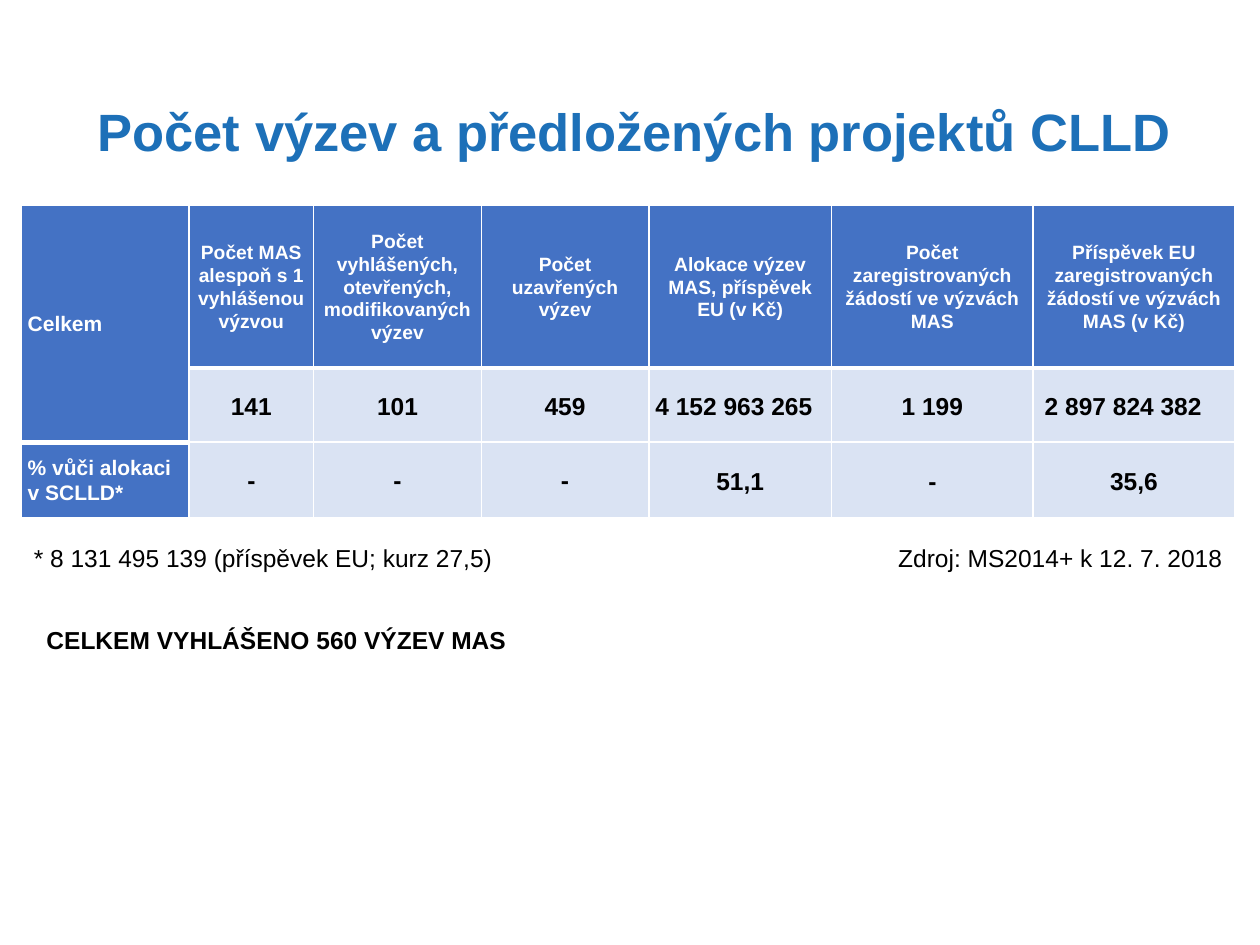
from lxml import etree
from pptx import Presentation
from pptx import util as u
from pptx.dml import color
from pptx.enum import text
from pptx.oxml import ns

FONT = "Arial"
WHITE, BLACK = "FFFFFF", "000000"
TITLE_BLUE, HEADER_BLUE, PALE_BLUE = "1D70B8", "4472C4", "DAE3F3"
LEFT, CENTER = text.PP_ALIGN.LEFT, text.PP_ALIGN.CENTER

COLUMNS = [1.33, 0.99, 1.33, 1.33, 1.45, 1.6, 1.6]
ROWS = [1.29, 0.59, 0.6]
CELLS = [
    ["Celkem", "Počet MAS alespoň s 1 vyhlášenou výzvou",
     "Počet vyhlášených, otevřených, modifikovaných výzev",
     "Počet uzavřených výzev", "Alokace výzev MAS, příspěvek EU (v Kč)",
     "Počet zaregistrovaných žádostí ve výzvách MAS",
     "Příspěvek EU zaregistrovaných žádostí ve výzvách MAS (v Kč)"],
    ["", "141", "101", "459", "4 152 963 265", "1 199", "2 897 824 382"],
    ["% vůči alokaci v SCLLD*", "-", "-", "-", "51,1", "-", "35,6"],
]
# The two long amounts sit slightly left of their column centres
AMOUNT_MARGINS = {(1, 4): (0.02, 0.12), (1, 6): (0.02, 0.19)}


def rgb(value):
    return color.RGBColor.from_string(value)


def add_run(para, words, size, ink, bold):
    span = para.add_run()
    span.text = words
    span.font.name = FONT
    span.font.size = u.Pt(size)
    span.font.bold = bold
    span.font.color.rgb = rgb(ink)


def add_label(page, area, words, size=14, ink=BLACK, bold=False,
              align=LEFT, spacing=None, wrap=True):
    box = page.shapes.add_textbox(*(u.Inches(length) for length in area))
    frame = box.text_frame
    frame.word_wrap = wrap
    frame.auto_size = text.MSO_AUTO_SIZE.SHAPE_TO_FIT_TEXT
    para = frame.paragraphs[0]
    para.alignment = align
    if spacing:
        para.line_spacing = spacing
    add_run(para, words, size, ink, bold)


def set_borders(cell, top, bottom):
    properties = cell._tc.get_or_add_tcPr()
    for side, width in (("L", 1), ("R", 1), ("T", top), ("B", bottom)):
        line = etree.SubElement(properties, ns.qn(f"a:ln{side}"), w=str(u.Pt(width)))
        fill = etree.SubElement(line, ns.qn("a:solidFill"))
        etree.SubElement(fill, ns.qn("a:srgbClr"), val=WHITE)


def style_cell(cell, row, column):
    label = column == 0
    header = row == 0 or label
    # Thick rules close the header row and the merged label
    thick_bottom = (row == 0 and not label) or (row == 1 and label)
    thick_top = (row == 1 and not label) or (row == 2 and label)
    set_borders(cell, 3 if thick_top else 1, 3 if thick_bottom else 1)
    cell.fill.solid()
    cell.fill.fore_color.rgb = rgb(HEADER_BLUE if header else PALE_BLUE)
    cell.vertical_anchor = text.MSO_ANCHOR.MIDDLE
    left, right = AMOUNT_MARGINS.get((row, column), (0.05, 0.05))
    cell.margin_left, cell.margin_right = u.Inches(left), u.Inches(right)
    cell.margin_top = cell.margin_bottom = 0

    words = CELLS[row][column]
    if words:
        para = cell.text_frame.paragraphs[0]
        para.alignment = LEFT if label else CENTER
        loose = row == 1 or (row == 2 and column > 3)
        para.line_spacing = 1.15 if loose else 1.07
        size = 12 if label else 11 if header else 14
        add_run(para, words, size, WHITE if header else BLACK, True)


def add_calls_table(page, left, top):
    frame = page.shapes.add_table(
        len(ROWS), len(COLUMNS), u.Inches(left), u.Inches(top),
        u.Inches(sum(COLUMNS)), u.Inches(sum(ROWS)))
    table = frame.table
    for column, width in zip(table.columns, COLUMNS):
        column.width = u.Inches(width)
    for row, height in zip(table.rows, ROWS):
        row.height = u.Inches(height)
    table.cell(0, 0).merge(table.cell(1, 0))
    for row in range(len(ROWS)):
        for column in range(len(COLUMNS)):
            style_cell(table.cell(row, column), row, column)


def add_notes_below(page, left, top):
    add_label(page, (left, top, 3.99, 0.34),
              "* 8 131 495 139 (příspěvek EU; kurz 27,5)")
    add_label(page, (left + 6.86, top, 2.78, 0.34),
              "Zdroj: MS2014+ k 12. 7. 2018", wrap=False)
    add_label(page, (left + 0.1, top + 0.65, 3.99, 0.34),
              "CELKEM VYHLÁŠENO 560 VÝZEV MAS", bold=True)


def main():
    deck = Presentation()
    deck.slide_width, deck.slide_height = u.Inches(10), u.Inches(7.5)
    page = deck.slides.add_slide(deck.slide_layouts[6])
    # Title
    add_label(page, (0.59, 0.79, 8.89, 0.56),
              "Počet výzev a předložených projektů CLLD",
              size=30, ink=TITLE_BLUE, bold=True, align=CENTER, spacing=0.9)
    # Table and the lines under it
    add_calls_table(page, 0.17, 1.63)
    add_notes_below(page, 0.17, 4.26)
    deck.save("out.pptx")


if __name__ == "__main__":
    main()
